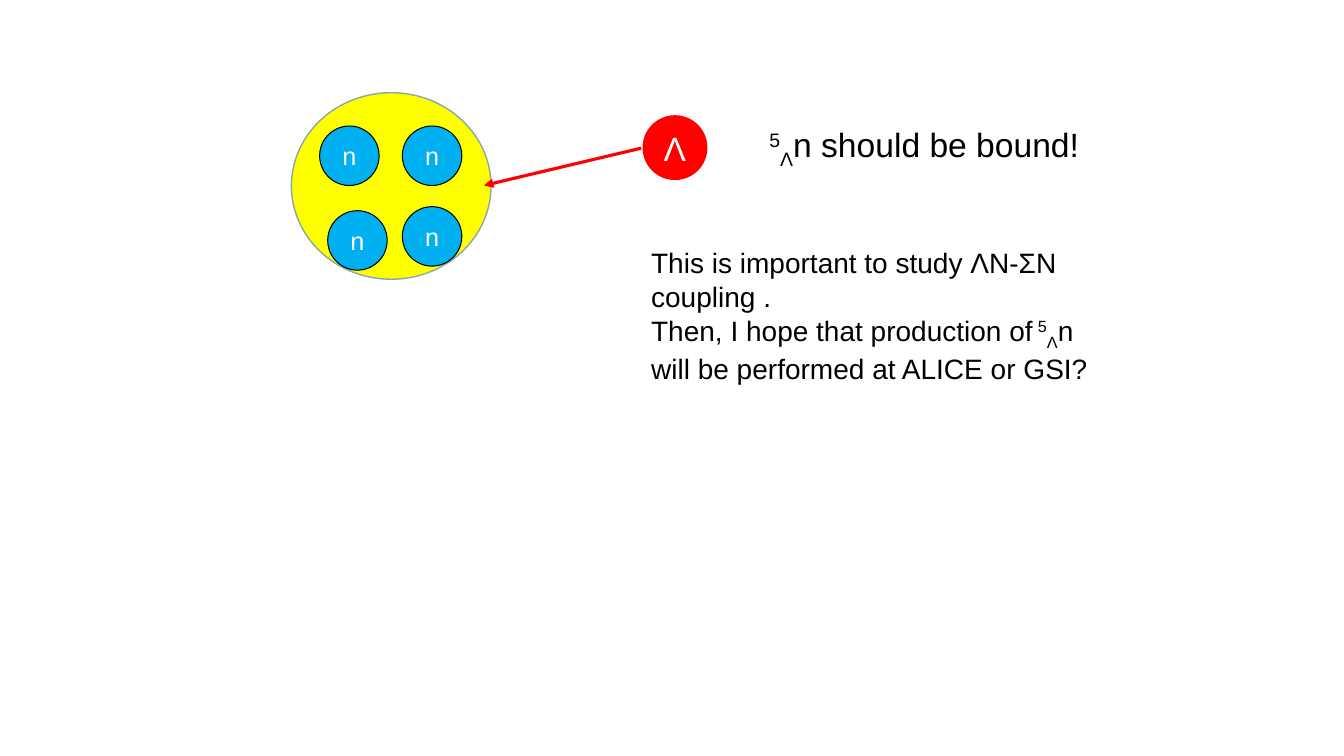
from dataclasses import dataclass

from lxml.etree import SubElement
from pptx import Presentation
from pptx.dml.color import RGBColor as RGB
from pptx.enum.shapes import MSO_CONNECTOR as LINK, MSO_SHAPE as SHAPE
from pptx.enum.text import MSO_ANCHOR as ANCHOR, MSO_AUTO_SIZE as FIT, PP_ALIGN as ALIGN
from pptx.oxml.ns import qn
from pptx.util import Inches, Pt


@dataclass(frozen=True)
class Theme:
    font: str = "Arial"
    black: RGB = RGB(0, 0, 0)
    white: RGB = RGB(255, 255, 255)
    red: RGB = RGB(255, 0, 0)
    blue: RGB = RGB(0, 0xB0, 0xF0)
    yellow: RGB = RGB(255, 255, 0)
    rim: RGB = RGB(0x8A, 0xA6, 0xA8)
    large: int = 24
    text: int = 20
    small: int = 18


THEME = Theme()
SUPER, SUB = 30000, -25000
HYPER = [("5", SUPER), ("Λ", SUB)]


def add_run(para, text, size, color, base=0):
    run = para.add_run()
    run.text = text
    font = run.font
    font.name, font.size = THEME.font, Pt(size)
    font.color.rgb = color
    if base:
        run._r.get_or_add_rPr().set("baseline", str(base))


def add_ball(slide, box, fill, rim, weight, label="", size=THEME.small):
    ball = slide.shapes.add_shape(SHAPE.OVAL, *map(Inches, box))
    ball.shadow.inherit = False
    ball.fill.solid()
    ball.fill.fore_color.rgb = fill
    ball.line.color.rgb = rim
    ball.line.width = Pt(weight)
    if label:
        frame = ball.text_frame
        frame.word_wrap = False
        frame.vertical_anchor = ANCHOR.MIDDLE
        para = frame.paragraphs[0]
        para.alignment = ALIGN.CENTER
        add_run(para, label, size, THEME.white)


def add_arrow(slide, start, end, color, weight):
    arrow = slide.shapes.add_connector(LINK.STRAIGHT, *map(Inches, start + end))
    arrow.line.color.rgb = color
    arrow.line.width = Pt(weight)
    props = arrow._element.spPr
    SubElement(props.find(qn("a:ln")), qn("a:tailEnd"), type="triangle")
    SubElement(props, qn("a:effectLst"))


def fill_text(shape, box, lines, size):
    shape.left, shape.top, shape.width, shape.height = map(Inches, box)
    frame = shape.text_frame
    frame.word_wrap = False
    frame.auto_size = FIT.NONE
    frame.vertical_anchor = ANCHOR.TOP
    for i, parts in enumerate(lines):
        para = frame.add_paragraph() if i else frame.paragraphs[0]
        para.alignment = ALIGN.LEFT
        for text, base in parts:
            add_run(para, text, size, THEME.black, base)


def main():
    prs = Presentation()
    prs.slide_width, prs.slide_height = Inches(13.33), Inches(7.5)
    slide = prs.slides.add_slide(prs.slide_layouts[5])

    # Nucleus with four neutrons
    add_ball(slide, (2.89, 0.92, 1.98, 1.85), THEME.yellow, THEME.rim, 1)
    for left, top in [(3.17, 1.25), (3.99, 1.25), (3.99, 2.05), (3.25, 2.09)]:
        add_ball(slide, (left, top, 0.59, 0.59), THEME.blue, THEME.black, 0.75, "n")

    # Lambda particle joining the nucleus
    add_arrow(slide, (6.36, 1.47), (4.8, 1.84), THEME.red, 2.25)
    add_ball(slide, (6.38, 1.15, 0.63, 0.63), THEME.red, THEME.red, 1, "Λ", THEME.large)

    # Claim
    claim = HYPER + [("n should be bound!", 0)]
    fill_text(slide.shapes.title, (7.53, 1.18, 3.34, 0.5), [claim], THEME.large)

    # Reason and hope
    lines = [
        [("This is important to study ΛN-ΣN", 0)],
        [("coupling .", 0)],
        [("Then, I hope that production of", 0), (" ", SUPER), *HYPER, ("n", 0)],
        [("will be performed at ALICE or GSI?", 0)],
    ]
    note = slide.shapes.add_textbox(0, 0, 0, 0)
    fill_text(note, (6.36, 2.39, 4.56, 2.12), lines, THEME.text)

    prs.save("out.pptx")


if __name__ == "__main__":
    main()
